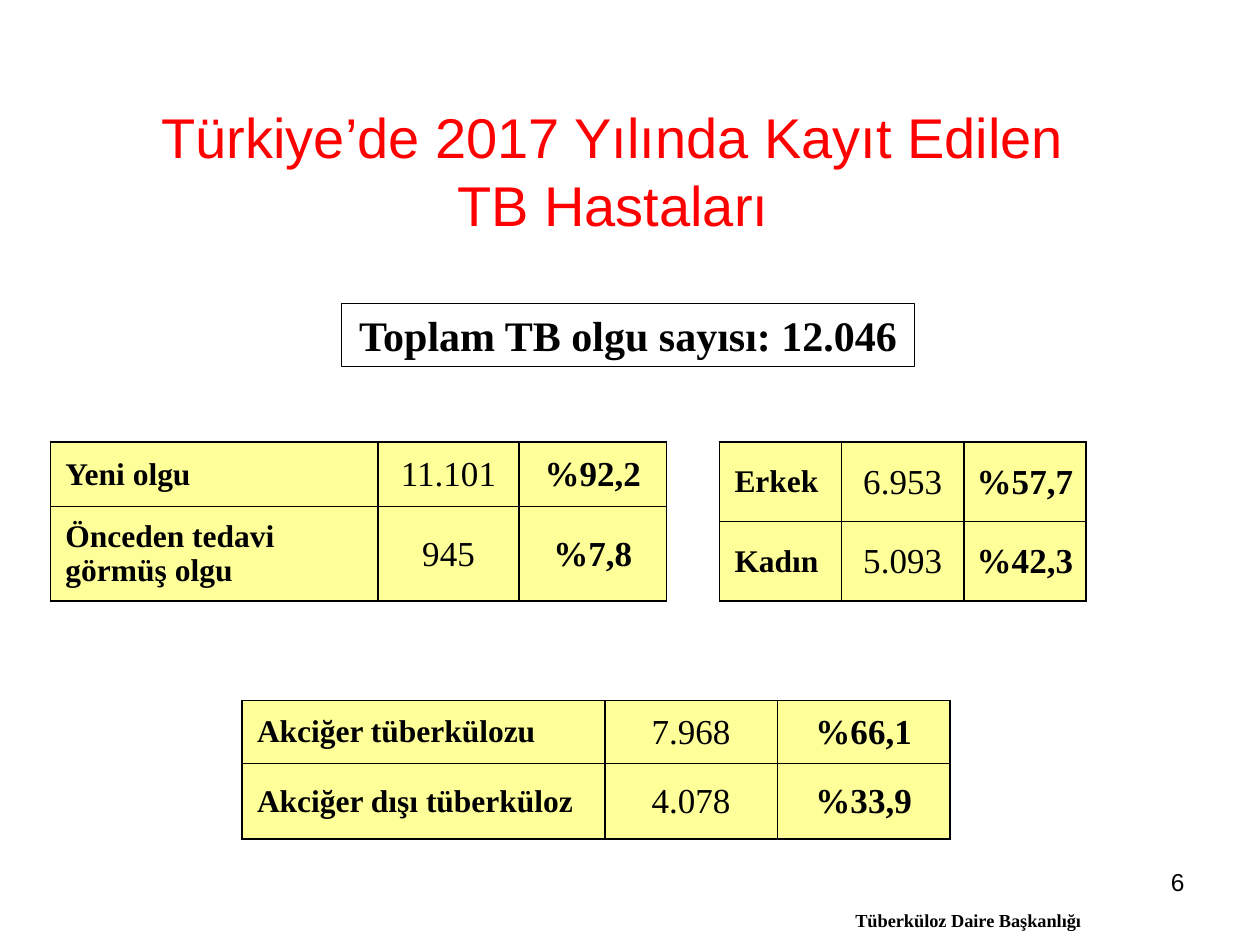
"""Build a slide of the tuberculosis cases registered in Türkiye in 2017."""
from lxml import etree
from pptx import Presentation, util as u
from pptx.dml.color import RGBColor
from pptx.enum import shapes, text
from pptx.oxml.ns import qn

BLACK = RGBColor(0, 0, 0)
WHITE = RGBColor(255, 255, 255)
RED = RGBColor(255, 0, 0)
CREAM = RGBColor(255, 255, 153)
SERIF = "Times New Roman"
LEFT, MID, RIGHT = text.PP_ALIGN.LEFT, text.PP_ALIGN.CENTER, text.PP_ALIGN.RIGHT


def write(frame, words, size, align, bold=False, face=SERIF, color=BLACK):
    """Fill a text frame with one styled paragraph."""
    frame.text = words
    para = frame.paragraphs[0]
    para.alignment = align
    font = para.runs[0].font
    font.size, font.bold, font.name = u.Pt(size), bold, face
    font.color.rgb = color


def edge(cell):
    """Draw thin black borders round a table cell."""
    props = cell._tc.get_or_add_tcPr()
    for spot, side in enumerate(("lnL", "lnR", "lnT", "lnB")):
        line = etree.Element(qn(f"a:{side}"), w=str(u.Pt(1)))
        fill = etree.SubElement(line, qn("a:solidFill"))
        etree.SubElement(fill, qn("a:srgbClr"), val=str(BLACK))
        props.insert(spot, line)


deck = Presentation()
deck.slide_width, deck.slide_height = u.Inches(10), u.Inches(7.5)
slide = deck.slides.add_slide(deck.slide_layouts[5])

title = slide.shapes.title
title.left, title.top = u.Inches(1.05), u.Inches(0.76)
title.width, title.height = u.Inches(7.63), u.Inches(1.18)
frame = title.text_frame
frame.auto_size = text.MSO_AUTO_SIZE.NONE
frame.vertical_anchor = text.MSO_ANCHOR.MIDDLE
write(frame, "Türkiye’de 2017 Yılında Kayıt Edilen TB Hastaları", 32, MID, face="Arial", color=RED)

boxes = [
    ("Toplam TB olgu sayısı: 12.046", (2.71, 2.41, 4.55, 0.5), 24, MID, True),
    ("Tüberküloz Daire Başkanlığı", (6.69, 7.16, 2.62, 0.29), 10.5, LEFT, False),
]
for words, place, size, align, framed in boxes:
    box = slide.shapes.add_shape(shapes.MSO_SHAPE.RECTANGLE, *map(u.Inches, place))
    box.shadow.inherit = False
    box.fill.solid()
    box.fill.fore_color.rgb = WHITE
    if framed:
        box.line.color.rgb = BLACK
        box.line.width = u.Pt(0.75)
    else:
        box.line.fill.background()
    box.text_frame.vertical_anchor = text.MSO_ANCHOR.MIDDLE
    write(box.text_frame, words, size, align, bold=True)

tables = [
    ((5.71, 3.51), (0.97, 0.97, 0.97), (0.63, 0.63),
     [("Erkek", "6.953", "%57,7"), ("Kadın", "5.093", "%42,3")]),
    ((1.92, 5.56), (2.88, 1.37, 1.37), (0.5, 0.6),
     [("Akciğer tüberkülozu", "7.968", "%66,1"),
      ("Akciğer dışı tüberküloz", "4.078", "%33,9")]),
    ((0.4, 3.51), (2.6, 1.12, 1.17), (0.51, 0.75),
     [("Yeni olgu", "11.101", "%92,2"),
      ("Önceden tedavi görmüş olgu", "945", "%7,8")]),
]
for start, wides, highs, data in tables:
    place = (*start, sum(wides), sum(highs))
    table = slide.shapes.add_table(len(highs), len(wides), *map(u.Inches, place)).table
    for col, wide in zip(table.columns, wides):
        col.width = u.Inches(wide)
    for row, high, items in zip(table.rows, highs, data):
        row.height = u.Inches(high)
        for spot, (cell, words) in enumerate(zip(row.cells, items)):
            label = spot == 0
            cell.fill.solid()
            cell.fill.fore_color.rgb = CREAM
            cell.vertical_anchor = text.MSO_ANCHOR.MIDDLE
            cell.margin_left = cell.margin_right = u.Inches(0.12 if label else 0.01)
            cell.margin_top = u.Inches(0.05 if label else 0.01)
            cell.margin_bottom = u.Inches(0.05 if label else 0)
            write(cell.text_frame, words, 18 if label else 20,
                  LEFT if label else MID, bold=spot != 1)
            edge(cell)

page = slide.shapes.add_textbox(*map(u.Inches, (7.17, 6.83, 2.33, 0.52)))
page.text_frame.word_wrap = True
write(page.text_frame, "6", 14, RIGHT, face="Arial")

deck.save("out.pptx")
